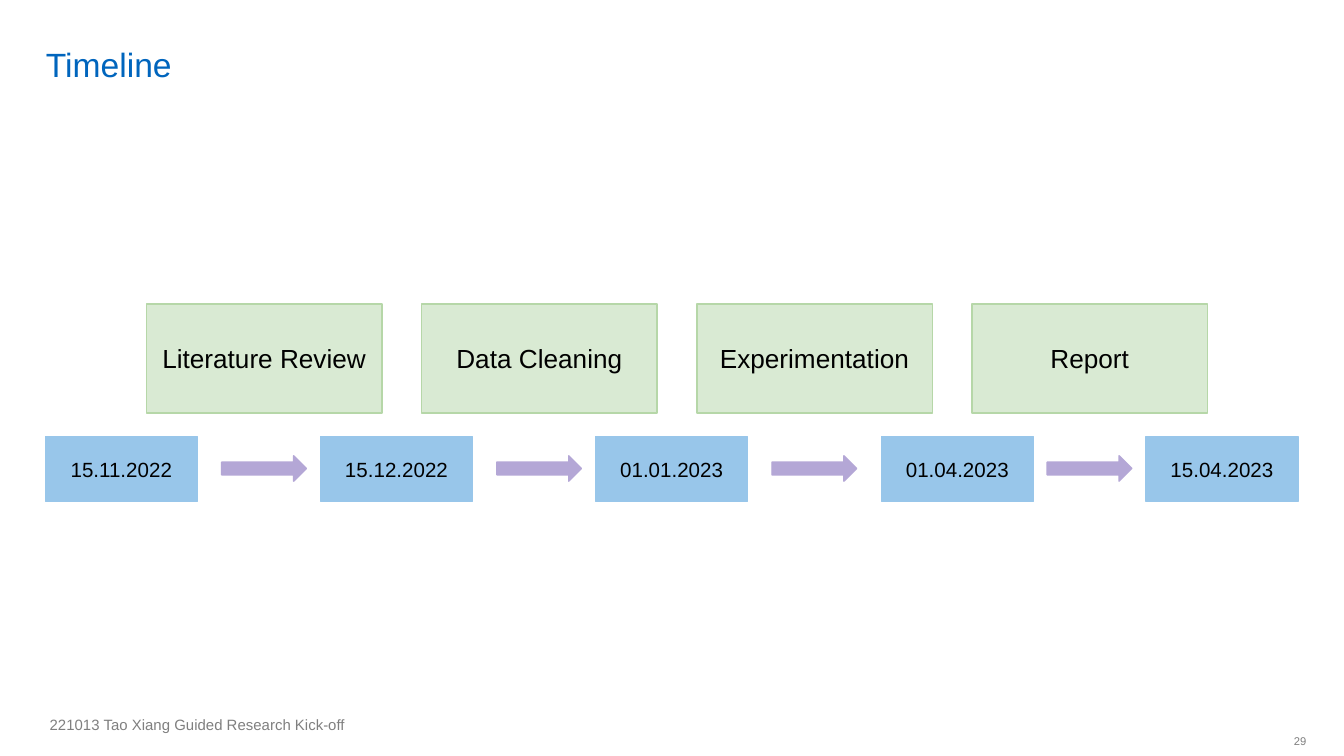
from dataclasses import dataclass

import pptx
import pptx.dml.color
import pptx.enum.shapes
import pptx.enum.text
import pptx.util

Cm = pptx.util.Cm
Shapes = pptx.enum.shapes.MSO_SHAPE
Anchor = pptx.enum.text.MSO_ANCHOR
Align = pptx.enum.text.PP_ALIGN


@dataclass(frozen=True)
class Theme:
    font: str = "Arial"
    title: str = "0065BD"
    ink: str = "000000"
    muted: str = "7F7F7F"
    phase_fill: str = "D9EAD3"
    phase_line: str = "B6D7A8"
    date_fill: str = "98C6EA"
    arrow_fill: str = "B4A7D6"
    title_size: int = 18
    phase_size: int = 14
    date_size: int = 11
    footer_size: int = 8
    number_size: int = 6
    line_width: float = 0.75


class TimelinePage:
    def __init__(self, page, theme):
        self.page = page
        self.theme = theme

    def set_text(self, shape, text, size, color, align, anchor, insets):
        frame = shape.text_frame
        frame.word_wrap = True
        frame.vertical_anchor = anchor
        (frame.margin_left, frame.margin_top,
         frame.margin_right, frame.margin_bottom) = map(Cm, insets)
        frame.text = text
        para = frame.paragraphs[0]
        para.alignment = align
        for span in para.runs:
            span.font.name = self.theme.font
            span.font.size = pptx.util.Pt(size)
            span.font.color.rgb = pptx.dml.color.RGBColor.from_string(color)

    def label(self, place, text, size, color, insets,
              align=Align.LEFT, anchor=Anchor.MIDDLE):
        box = self.page.shapes.add_textbox(*map(Cm, place))
        self.set_text(box, text, size, color, align, anchor, insets)

    def solid(self, kind, place, fill, line):
        shape = self.page.shapes.add_shape(kind, *map(Cm, place))
        shape.shadow.inherit = False
        shape.fill.solid()
        shape.fill.fore_color.rgb = pptx.dml.color.RGBColor.from_string(fill)
        shape.line.color.rgb = pptx.dml.color.RGBColor.from_string(line)
        shape.line.width = pptx.util.Pt(self.theme.line_width)
        return shape

    def card(self, place, text, size, fill, line):
        shape = self.solid(Shapes.RECTANGLE, place, fill, line)
        self.set_text(shape, text, size, self.theme.ink,
                      Align.CENTER, Anchor.MIDDLE, (0.25,) * 4)

    def arrow(self, place):
        color = self.theme.arrow_fill
        self.solid(Shapes.RIGHT_ARROW, place, color, color)


def main():
    theme = Theme()
    deck = pptx.Presentation()
    deck.slide_width, deck.slide_height = Cm(25.4), Cm(14.28)
    page = TimelinePage(deck.slides.add_slide(deck.slide_layouts[6]), theme)

    # Title
    page.label((0.69, 0.1, 22.05, 1.5), "Timeline", theme.title_size,
               theme.title, (0.18, 0, 0.18, 0), anchor=Anchor.BOTTOM)

    # Phases, each with an arrow below it
    pitch = 5.2
    phases = ["Literature Review", "Data Cleaning", "Experimentation", "Report"]
    for index, phase in enumerate(phases):
        page.card((2.77 + index * pitch, 5.74, 4.45, 2.06), phase,
                  theme.phase_size, theme.phase_fill, theme.phase_line)
        page.arrow((4.19 + index * pitch, 8.61, 1.6, 0.48))

    # Dates; the fourth sits a little to the right of the even rhythm
    dates = [("15.11.2022", 0), ("15.12.2022", 0), ("01.01.2023", 0),
             ("01.04.2023", 0.2), ("15.04.2023", 0)]
    for index, (date, shift) in enumerate(dates):
        page.card((0.86 + index * pitch + shift, 8.25, 2.87, 1.22), date,
                  theme.date_size, theme.date_fill, theme.date_fill)

    # Footer and page number
    page.label((0.69, 13.28, 16, 0.81),
               "221013 Tao Xiang Guided Research Kick-off",
               theme.footer_size, theme.muted, (0.25, 0.13, 0.25, 0.13))
    page.label((24, 13.69, 0.69, 0.61), "29", theme.number_size, theme.muted,
               (0.18, 0.1, 0, 0.1), align=Align.RIGHT)

    deck.save("out.pptx")


if __name__ == "__main__":
    main()
